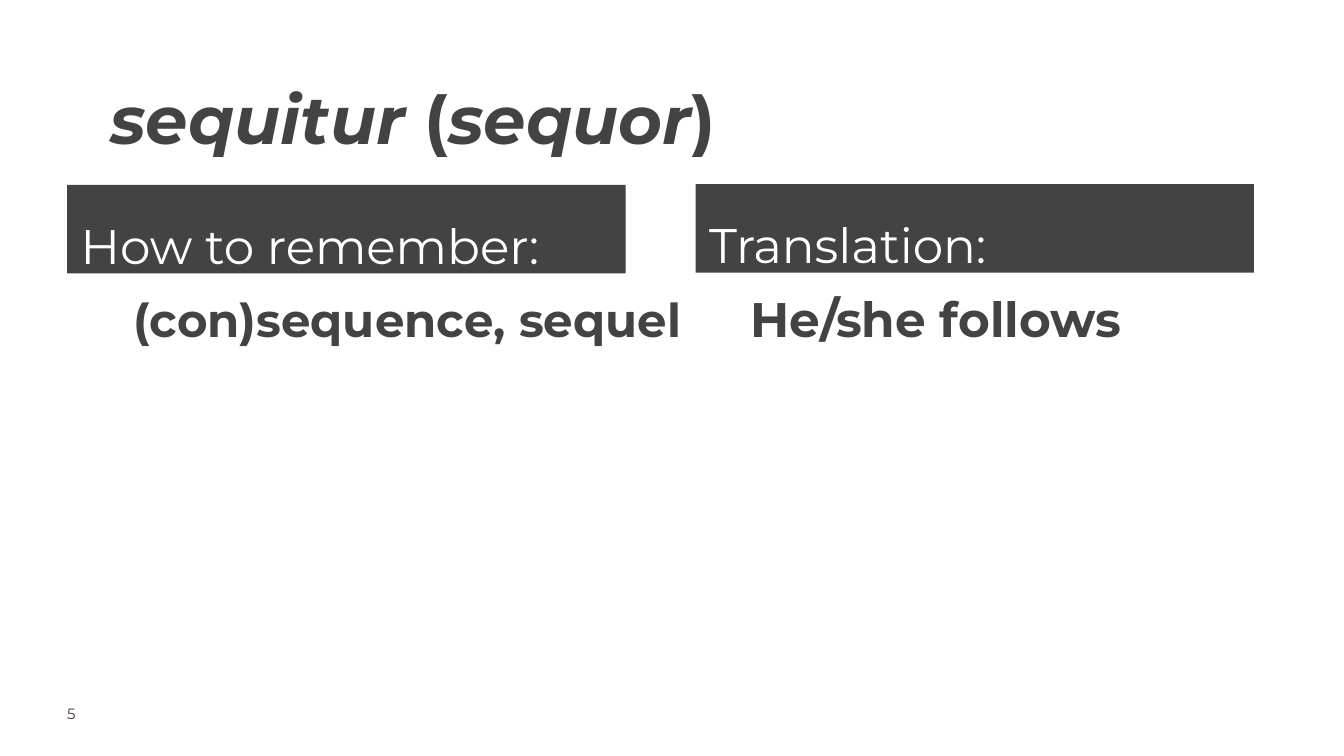
from dataclasses import dataclass

from pptx import Presentation
from pptx import util as u
from pptx.dml import color as c
from pptx.enum import shapes, text


@dataclass(frozen=True)
class Theme:
    font: str = "Montserrat"
    dark: str = "434343"
    light: str = "FFFFFF"
    plum: str = "4B3241"
    title: int = 72
    head: int = 52
    clue: int = 50
    page: int = 16


T = Theme()
PAD = 0.51
TOP = text.MSO_ANCHOR.TOP
MID = text.MSO_ANCHOR.MIDDLE


def write(shape, runs, size, color, bold=False, pad=0, line=None, anchor=TOP):
    """Fill a shape with one paragraph; runs are (words, italic) pairs."""
    frame = shape.text_frame
    frame.word_wrap = True
    frame.vertical_anchor = anchor
    frame.margin_left = frame.margin_right = u.Cm(pad)
    frame.margin_top = frame.margin_bottom = u.Cm(pad)
    para = frame.paragraphs[0]
    para.alignment = text.PP_ALIGN.LEFT
    if line:
        para.line_spacing = line
    for words, slant in runs:
        run = para.add_run()
        run.text = words
        font = run.font
        font.name, font.size = T.font, u.Pt(size)
        font.bold, font.italic = bold, slant
        font.color.rgb = c.RGBColor.from_string(color)


def add_text(slide, box, runs, size, color, **style):
    shape = slide.shapes.add_textbox(*map(u.Cm, box))
    write(shape, runs, size, color, **style)


def add_head(slide, box, words):
    """Dark bar with a light heading."""
    bar = slide.shapes.add_shape(shapes.MSO_SHAPE.RECTANGLE, *map(u.Cm, box))
    bar.shadow.inherit = False
    bar.fill.solid()
    bar.fill.fore_color.rgb = c.RGBColor.from_string(T.dark)
    bar.line.fill.background()
    write(bar, [(words, False)], T.head, T.light, pad=PAD, line=1.3)


def main():
    deck = Presentation()
    deck.slide_width, deck.slide_height = u.Cm(50.8), u.Cm(28.58)
    slide = deck.slides.add_slide(deck.slide_layouts[6])

    # Title
    term = [("sequitur ", True), ("(", False), ("sequor", True), (")", False)]
    add_text(slide, (4.17, 2.46, 44.1, 4.52), term, T.title, T.dark,
             bold=True, line=1.15)

    # Heading bars
    add_head(slide, (2.54, 6.99, 21.11, 3.35), "How to remember:")
    add_head(slide, (26.29, 6.96, 21.11, 3.35), "Translation:")

    # Answers below the bars
    for box, words, size in (
        ((4.52, 10.36, 22.07, 3.35), "(con)sequence, sequel", T.clue),
        ((27.86, 10.34, 19.48, 3.35), "He/she follows", T.head),
    ):
        add_text(slide, box, [(words, False)], size, T.dark,
                 bold=True, pad=PAD, anchor=MID)

    # Page number
    add_text(slide, (2.54, 26.62, 3.99, 0.99), [("5", False)], T.page, T.plum)

    deck.save("out.pptx")


if __name__ == "__main__":
    main()
